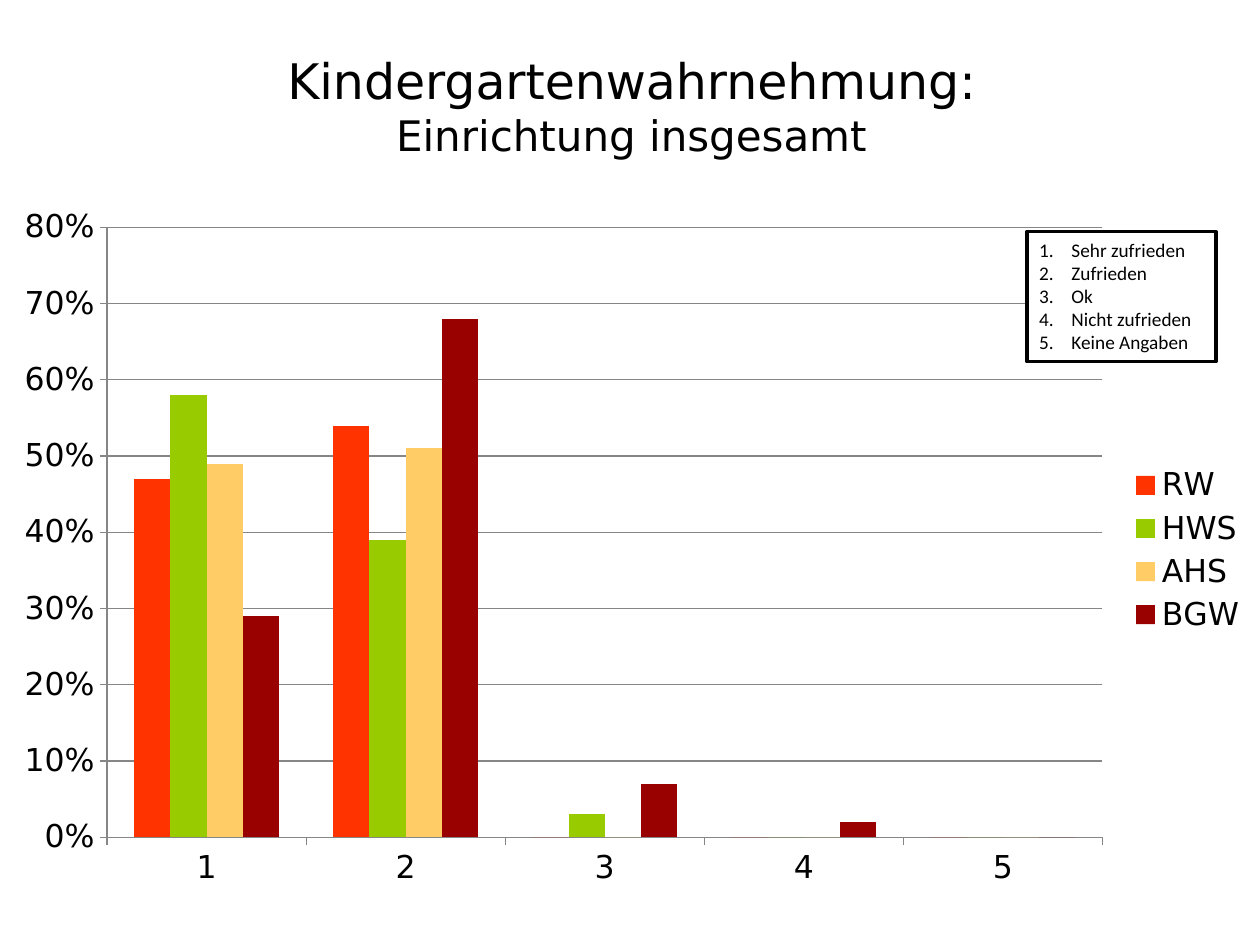
from dataclasses import dataclass

from lxml.etree import SubElement
from pptx import Presentation
from pptx.chart.data import CategoryChartData
from pptx.dml.color import RGBColor as RGB
from pptx.enum.chart import XL_CHART_TYPE, XL_LEGEND_POSITION, XL_TICK_MARK
from pptx.enum.shapes import MSO_SHAPE
from pptx.enum.text import MSO_ANCHOR, MSO_AUTO_SIZE, PP_ALIGN
from pptx.oxml import parse_xml
from pptx.oxml.ns import nsdecls, qn
from pptx.util import Cm, Pt


@dataclass(frozen=True)
class Theme:
    display: str = "DejaVu Sans"
    body: str = "Calibri"
    ink: RGB = RGB(0, 0, 0)
    paper: RGB = RGB(255, 255, 255)
    grid: RGB = RGB(0x86, 0x86, 0x86)
    title_size: Pt = Pt(28)
    subtitle_size: Pt = Pt(24)
    chart_size: Pt = Pt(18)
    key_size: Pt = Pt(11)


THEME = Theme()
RATINGS = ["Sehr zufrieden", "Zufrieden", "Ok", "Nicht zufrieden", "Keine Angaben"]
SCHOOLS = [
    ("RW", "FF3300", (0.47, 0.54, 0, 0, 0)),
    ("HWS", "99CC00", (0.58, 0.39, 0.03, 0, 0)),
    ("AHS", "FFCC66", (0.49, 0.51, 0, 0, 0)),
    ("BGW", "990000", (0.29, 0.68, 0.07, 0.02, 0)),
]
PLOT_LAYOUT = {"x": 0.085, "y": 0.045, "w": 0.79, "h": 0.86}


def set_font(font, name, size):
    font.name = name
    font.size = size
    font.color.rgb = THEME.ink


def place_title(slide, left, top, width, height):
    title = slide.shapes.title
    title.left, title.top, title.width, title.height = left, top, width, height
    frame = title.text_frame
    frame.auto_size = MSO_AUTO_SIZE.NONE
    frame.vertical_anchor = MSO_ANCHOR.MIDDLE
    heading = frame.paragraphs[0]
    heading.alignment = PP_ALIGN.CENTER
    set_font(heading.font, THEME.display, THEME.title_size)
    heading.add_run().text = "Kindergartenwahrnehmung:"
    heading.add_line_break()
    subtitle = heading.add_run()
    subtitle.text = "Einrichtung insgesamt"
    subtitle.font.size = THEME.subtitle_size


def fix_plot_area(chart):
    """Hold the inner plot area at fixed fractions of the chart."""
    plot_area = chart._chartSpace.chart.plotArea
    for old in plot_area.findall(qn("c:layout")):
        plot_area.remove(old)
    layout = parse_xml(f"<c:layout {nsdecls('c')}/>")
    manual = SubElement(layout, qn("c:manualLayout"))
    settings = {"layoutTarget": "inner", "xMode": "edge", "yMode": "edge", **PLOT_LAYOUT}
    for tag, value in settings.items():
        SubElement(manual, qn(f"c:{tag}")).set("val", str(value))
    plot_area.insert(0, layout)


def add_ratings_chart(slide, left, top, width, height):
    data = CategoryChartData(number_format="0%")
    data.categories = [str(n) for n in range(1, len(RATINGS) + 1)]
    for school, _, shares in SCHOOLS:
        data.add_series(school, shares)
    chart = slide.shapes.add_chart(
        XL_CHART_TYPE.COLUMN_CLUSTERED, left, top, width, height, data).chart
    chart.has_title = False
    set_font(chart.font, THEME.body, THEME.chart_size)

    plot = chart.plots[0]
    plot.gap_width = 150
    plot.overlap = 0
    plot.vary_by_categories = False
    for series, (_, color, _) in zip(plot.series, SCHOOLS):
        series.format.fill.solid()
        series.format.fill.fore_color.rgb = RGB.from_string(color)

    shares_axis = chart.value_axis
    shares_axis.minimum_scale, shares_axis.maximum_scale = 0, 0.8
    shares_axis.major_unit = 0.1
    shares_axis.has_major_gridlines = True
    shares_axis.tick_labels.number_format = "0%"
    shares_axis.tick_labels.number_format_is_linked = False
    for axis in (chart.category_axis, shares_axis):
        axis.major_tick_mark = XL_TICK_MARK.OUTSIDE
        set_font(axis.tick_labels.font, THEME.display, THEME.chart_size)
    for ruled in (chart.category_axis, shares_axis, shares_axis.major_gridlines):
        ruled.format.line.color.rgb = THEME.grid
        ruled.format.line.width = Pt(0.75)

    chart.has_legend = True
    chart.legend.position = XL_LEGEND_POSITION.RIGHT
    chart.legend.include_in_layout = False
    set_font(chart.legend.font, THEME.display, THEME.chart_size)
    fix_plot_area(chart)


def number_paragraph(paragraph, indent):
    props = paragraph._p.get_or_add_pPr()
    props.set("marL", str(indent))
    props.set("indent", str(-indent))
    props.insert(0, parse_xml(f'<a:buAutoNum {nsdecls("a")} type="arabicPeriod"/>'))


def add_rating_key(slide, left, top, width, height):
    key = slide.shapes.add_shape(MSO_SHAPE.RECTANGLE, left, top, width, height)
    key.shadow.inherit = False
    key.fill.solid()
    key.fill.fore_color.rgb = THEME.paper
    key.line.color.rgb = THEME.ink
    key.line.width = Pt(2)
    frame = key.text_frame
    frame.word_wrap = True
    frame.auto_size = MSO_AUTO_SIZE.SHAPE_TO_FIT_TEXT
    frame.vertical_anchor = MSO_ANCHOR.TOP
    frame.text = "\n".join(RATINGS)
    for rating in frame.paragraphs:
        rating.alignment = PP_ALIGN.LEFT
        set_font(rating.font, THEME.body, THEME.key_size)
        number_paragraph(rating, Cm(0.65))


def main():
    prs = Presentation()
    prs.slide_width, prs.slide_height = Cm(25.4), Cm(19.05)
    slide = prs.slides.add_slide(prs.slide_layouts.get_by_name("Title Only"))
    place_title(slide, Cm(1.3), Cm(0.53), Cm(22.86), Cm(3.18))
    add_ratings_chart(slide, Cm(0), Cm(3.94), Cm(25.4), Cm(14.3))
    add_rating_key(slide, Cm(20.7), Cm(4.67), Cm(3.81), Cm(2.62))
    prs.save("out.pptx")


if __name__ == "__main__":
    main()
